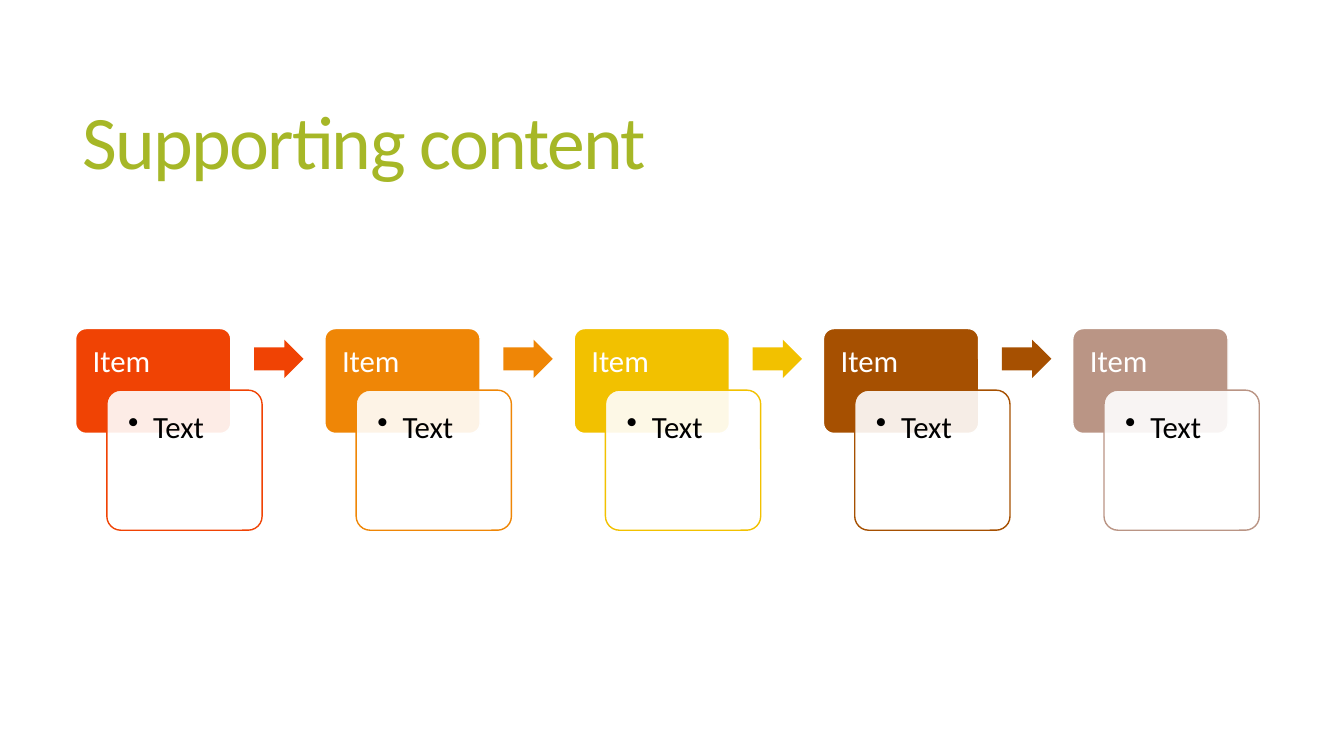
"""Build a slide with a five-step process of overlapping cards and arrows."""
from lxml.etree import SubElement
from pptx import Presentation
from pptx.dml.color import RGBColor
from pptx.enum.shapes import MSO_SHAPE
from pptx.enum.text import MSO_ANCHOR
from pptx.oxml.ns import qn
from pptx.util import Pt

PX = 9144
WHITE = RGBColor(0xFF, 0xFF, 0xFF)
BLACK = RGBColor(0x00, 0x00, 0x00)
LIME = RGBColor(0xA6, 0xB7, 0x27)
RED = RGBColor(0xF0, 0x43, 0x04)
ORANGE = RGBColor(0xEF, 0x86, 0x06)
YELLOW = RGBColor(0xF2, 0xC1, 0x00)
BROWN = RGBColor(0xA6, 0x50, 0x01)
TAUPE = RGBColor(0xBA, 0x95, 0x85)

TITLE = "Supporting content"
STEPS = [
    ("Item", "Text", RED),
    ("Item", "Text", ORANGE),
    ("Item", "Text", YELLOW),
    ("Item", "Text", BROWN),
    ("Item", "Text", TAUPE),
]
FIRST_X, LAST_X, TOP = 75, 1064, 326
CARD_W = 154
PITCH = (LAST_X - FIRST_X) / (len(STEPS) - 1)


def emu(*lengths):
    return [round(n * PX) for n in lengths]


def add_shape(slide, kind, box, adjustments, fill, line=None, alpha=None):
    sp = slide.shapes.add_shape(kind, *emu(*box))
    sp.shadow.inherit = False
    for i, value in enumerate(adjustments):
        sp.adjustments[i] = value
    sp.fill.solid()
    sp.fill.fore_color.rgb = fill
    if alpha is not None:
        color = sp.fill._xPr.find(qn("a:solidFill"))[0]
        SubElement(color, qn("a:alpha"), val=str(alpha * 1000))
    if line is None:
        sp.line.fill.background()
    else:
        sp.line.color.rgb = line
        sp.line.width = Pt(1)


def add_text(slide, text, box, size=22, color=BLACK, insets=(17, 17, 17, 17),
             anchor=MSO_ANCHOR.TOP, spacing=0.9, tracking=None, bullet=False):
    tf = slide.shapes.add_textbox(*emu(*box)).text_frame
    tf.word_wrap = True
    tf.vertical_anchor = anchor
    tf.margin_left, tf.margin_top, tf.margin_right, tf.margin_bottom = emu(*insets)
    p = tf.paragraphs[0]
    p.line_spacing = spacing
    if bullet:
        pPr = p._p.get_or_add_pPr()
        indent, = emu(25)
        pPr.set("marL", str(indent))
        pPr.set("indent", str(-indent))
        SubElement(pPr, qn("a:buChar"), char="•")
    r = p.add_run()
    r.text = text
    r.font.name = "Calibri"
    r.font.size = Pt(size)
    r.font.color.rgb = color
    if tracking is not None:
        r.font._element.set("spc", str(tracking))


def add_step(slide, x, item, text, color, arrow):
    add_shape(slide, MSO_SHAPE.ROUNDED_RECTANGLE, (x, TOP, CARD_W, 104), [0.1],
              color, line=WHITE)
    add_text(slide, item, (x, TOP, CARD_W, 62), color=WHITE, insets=(17, 17, 17, 9))
    add_shape(slide, MSO_SHAPE.ROUNDED_RECTANGLE, (x + 31, TOP + 61, CARD_W, 139),
              [0.1], WHITE, line=color, alpha=90)
    add_text(slide, text, (x + 35, TOP + 66, CARD_W - 8, 130), bullet=True)
    if arrow:
        add_shape(slide, MSO_SHAPE.RIGHT_ARROW, (x + 177, TOP + 11, 49, 38),
                  [0.6, 0.5], color)


def main():
    prs = Presentation()
    prs.slide_width, prs.slide_height = emu(1333, 750)
    slide = prs.slides.add_slide(prs.slide_layouts[6])
    add_text(slide, TITLE, (72, 55, 1178, 181), size=54, color=LIME,
             insets=(10, 5, 10, 5), anchor=MSO_ANCHOR.MIDDLE, spacing=0.85,
             tracking=-120)
    for i, (item, text, color) in enumerate(STEPS):
        add_step(slide, FIRST_X + i * PITCH, item, text, color,
                 arrow=i < len(STEPS) - 1)
    prs.save("out.pptx")


if __name__ == "__main__":
    main()
